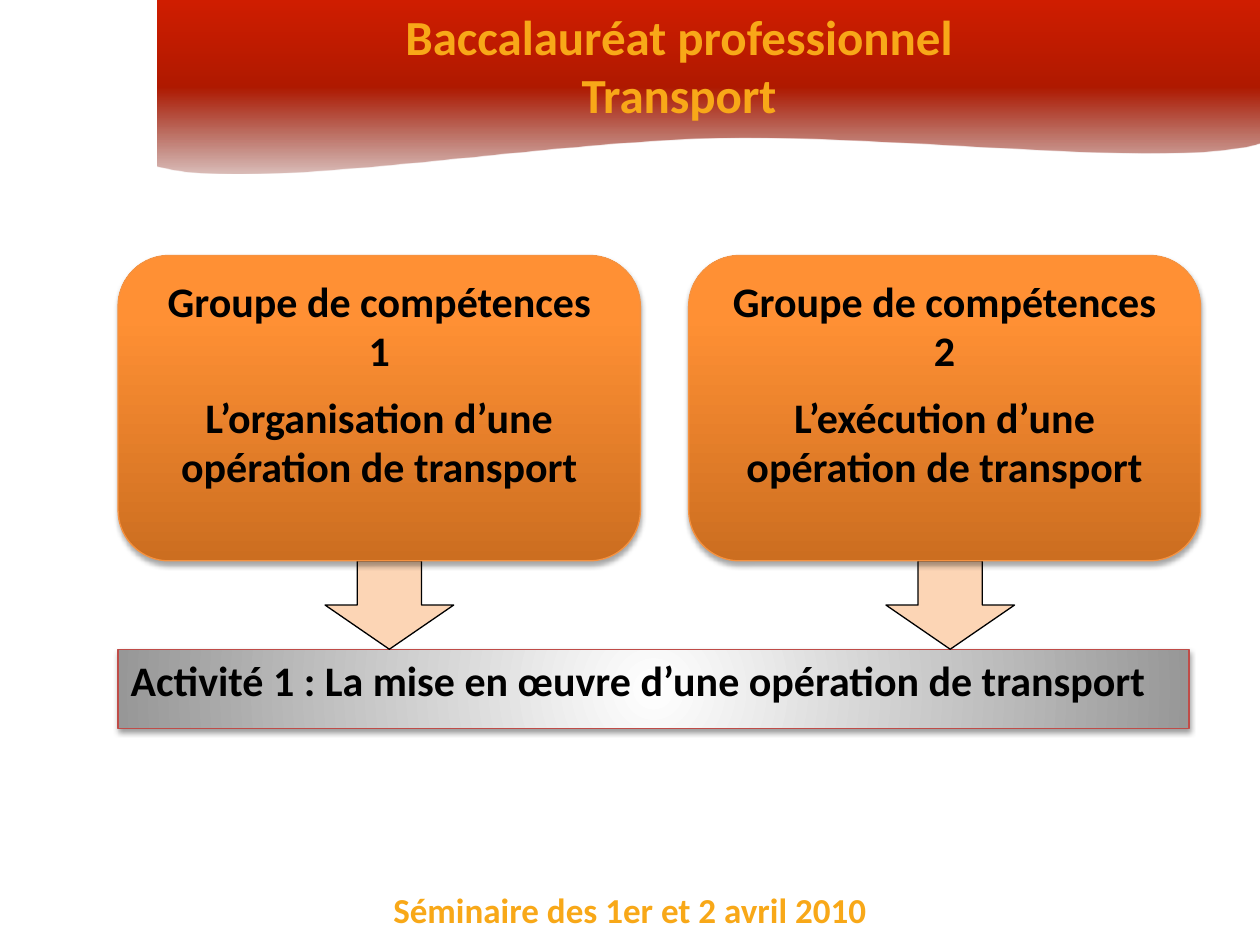
import pptx
import pptx.util
from lxml import etree
from pptx.dml.color import RGBColor
from pptx.enum.shapes import MSO_SHAPE
from pptx.enum.text import MSO_ANCHOR, PP_ALIGN
from pptx.oxml.ns import qn
from pptx.util import Pt

AMBER = RGBColor(0xF8, 0xA8, 0x18)
BLACK = RGBColor(0, 0, 0)
PEACH = RGBColor(0xFC, 0xD5, 0xB5)
ORANGE_LINE = RGBColor(0xF6, 0x92, 0x40)
RED_LINE = RGBColor(0xBF, 0x4C, 0x48)
# Gradient stops: position in percent, colour, opacity in percent
RED_STOPS = [(0, RGBColor(0x7B, 0x11, 0x00), 27),
             (50, RGBColor(0xAF, 0x19, 0x00), 100),
             (100, RGBColor(0xD0, 0x1D, 0x00), 100)]
ORANGE_STOPS = [(0, RGBColor(0xCC, 0x6E, 0x20), 100),
                (80, RGBColor(0xFF, 0x90, 0x34), 100),
                (100, RGBColor(0xFF, 0x91, 0x36), 100)]
GREY_STOPS = [(0, RGBColor(0xFF, 0xFF, 0xFF), 100),
              (100, RGBColor(0x97, 0x97, 0x97), 100)]

HEADER = ["Baccalauréat professionnel", "Transport"]
FOOTER = ["Séminaire des 1er et 2 avril 2010"]
ACTIVITY = ["Activité 1 : La mise en œuvre d’une opération de transport"]
# Left, width, arrow left, lines
GROUPS = [
    (67.5, 298.5, 185.75,
     ["Groupe de compétences", "1", "L’organisation d’une opération de transport"]),
    (393.5, 292.5, 506.25,
     ["Groupe de compétences", "2", "L’exécution d’une opération de transport"]),
]
GROUP_TOP, GROUP_HEIGHT = 146, 174.5
ARROW_WIDTH, ARROW_HEIGHT = 73.5, 50.5
ACTIVITY_BOX = (67.5, 371.25, 612, 45)

WAVE_START = (720, 81.5)
WAVE_CURVES = [
    [(669, 96.5), (515.5, 76.5), (410.5, 78.5)],
    [(305.5, 80.5), (143.5, 110), (90, 94.5)],
]
CURVE_STEPS = 24


def write(shape, lines, size, color=BLACK, align=PP_ALIGN.CENTER,
          line_spacing=None, last_gap=0, insets=(7.2, 3.6, 7.2, 3.6)):
    frame = shape.text_frame
    frame.word_wrap = True
    frame.vertical_anchor = MSO_ANCHOR.TOP
    (frame.margin_left, frame.margin_top,
     frame.margin_right, frame.margin_bottom) = map(Pt, insets)
    frame.text = "\n".join(lines)
    for paragraph in frame.paragraphs:
        paragraph.alignment = align
        paragraph.line_spacing = line_spacing
        paragraph.space_before = Pt(0)
        font = paragraph.font
        font.name, font.size, font.bold = "Calibri", Pt(size), True
        font.color.rgb = color
    if last_gap:
        frame.paragraphs[-1].space_before = Pt(last_gap)


def add_element(parent, tag, **attributes):
    return etree.SubElement(parent, qn(tag), {k: str(v) for k, v in attributes.items()})


def fill_gradient(shape, stops, radial=False):
    """Fill from bottom to top, or from the centre outwards if radial."""
    shape.fill.gradient()
    gradient = shape.element.spPr.find(qn("a:gradFill"))
    for child in list(gradient):
        gradient.remove(child)
    stop_list = add_element(gradient, "a:gsLst")
    for position, color, opacity in stops:
        stop = add_element(stop_list, "a:gs", pos=position * 1000)
        rgb = add_element(stop, "a:srgbClr", val=color)
        if opacity < 100:
            add_element(rgb, "a:alpha", val=opacity * 1000)
    if radial:
        focus = add_element(gradient, "a:path", path="circle")
        add_element(focus, "a:fillToRect", l=50000, t=50000, r=50000, b=50000)
    else:
        add_element(gradient, "a:lin", ang=16200000, scaled=0)


def outline(shape, color):
    shape.line.color.rgb = color
    shape.line.width = Pt(0.75)


def drop_shadow(shape, opacity, distance):
    shape.shadow.inherit = False
    effects = shape.element.spPr.find(qn("a:effectLst"))
    shadow = add_element(effects, "a:outerShdw", blurRad=Pt(3.1), dist=Pt(distance),
                         dir=5400000, rotWithShape=0)
    rgb = add_element(shadow, "a:srgbClr", val=BLACK)
    add_element(rgb, "a:alpha", val=opacity * 1000)


def curve_points(start, control_1, control_2, end):
    """Sample a cubic Bézier curve, leaving out its start."""
    for step in range(1, CURVE_STEPS + 1):
        t = step / CURVE_STEPS
        weights = ((1 - t) ** 3, 3 * t * (1 - t) ** 2, 3 * t * t * (1 - t), t ** 3)
        yield tuple(sum(w * p[axis] for w, p in zip(weights, (start, control_1, control_2, end)))
                    for axis in (0, 1))


def add_banner(slide):
    points = [(720, 0), WAVE_START]
    for curve in WAVE_CURVES:
        points.extend(curve_points(points[-1], *curve))
    builder = slide.shapes.build_freeform(Pt(90), Pt(0))
    builder.add_line_segments([(Pt(x), Pt(y)) for x, y in points], close=True)
    banner = builder.convert_to_shape()
    banner.shadow.inherit = False
    fill_gradient(banner, RED_STOPS)
    banner.line.fill.background()


def add_group(slide, left, width, arrow_left, lines):
    arrow = slide.shapes.add_shape(
        MSO_SHAPE.DOWN_ARROW, Pt(arrow_left), Pt(GROUP_TOP + GROUP_HEIGHT),
        Pt(ARROW_WIDTH), Pt(ARROW_HEIGHT))
    arrow.shadow.inherit = False
    arrow.fill.solid()
    arrow.fill.fore_color.rgb = PEACH
    outline(arrow, BLACK)

    box = slide.shapes.add_shape(MSO_SHAPE.ROUNDED_RECTANGLE, Pt(left), Pt(GROUP_TOP),
                                 Pt(width), Pt(GROUP_HEIGHT))
    fill_gradient(box, ORANGE_STOPS)
    outline(box, ORANGE_LINE)
    drop_shadow(box, 35, 1.8)
    write(box, lines, 24, line_spacing=0.98, last_gap=9.6, insets=(7.2, 4.3, 7.2, 3.6))


def main():
    presentation = pptx.Presentation()
    presentation.slide_width, presentation.slide_height = Pt(720), Pt(540)
    slide = presentation.slides.add_slide(presentation.slide_layouts[5])

    footer = slide.shapes.add_textbox(Pt(180), Pt(504), Pt(360), Pt(31.5))
    write(footer, FOOTER, 20, AMBER)
    add_banner(slide)
    header = slide.shapes.add_textbox(Pt(208), Pt(0), Pt(360), Pt(75))
    write(header, HEADER, 28, AMBER)

    activity = slide.shapes.title
    activity.left, activity.top, activity.width, activity.height = map(Pt, ACTIVITY_BOX)
    fill_gradient(activity, GREY_STOPS, radial=True)
    outline(activity, RED_LINE)
    drop_shadow(activity, 38, 1.6)
    write(activity, ACTIVITY, 24, align=PP_ALIGN.LEFT, line_spacing=0.98,
          insets=(7.2, 4.3, 7.2, 3.6))

    for group in GROUPS:
        add_group(slide, *group)
    presentation.save("out.pptx")


if __name__ == "__main__":
    main()
